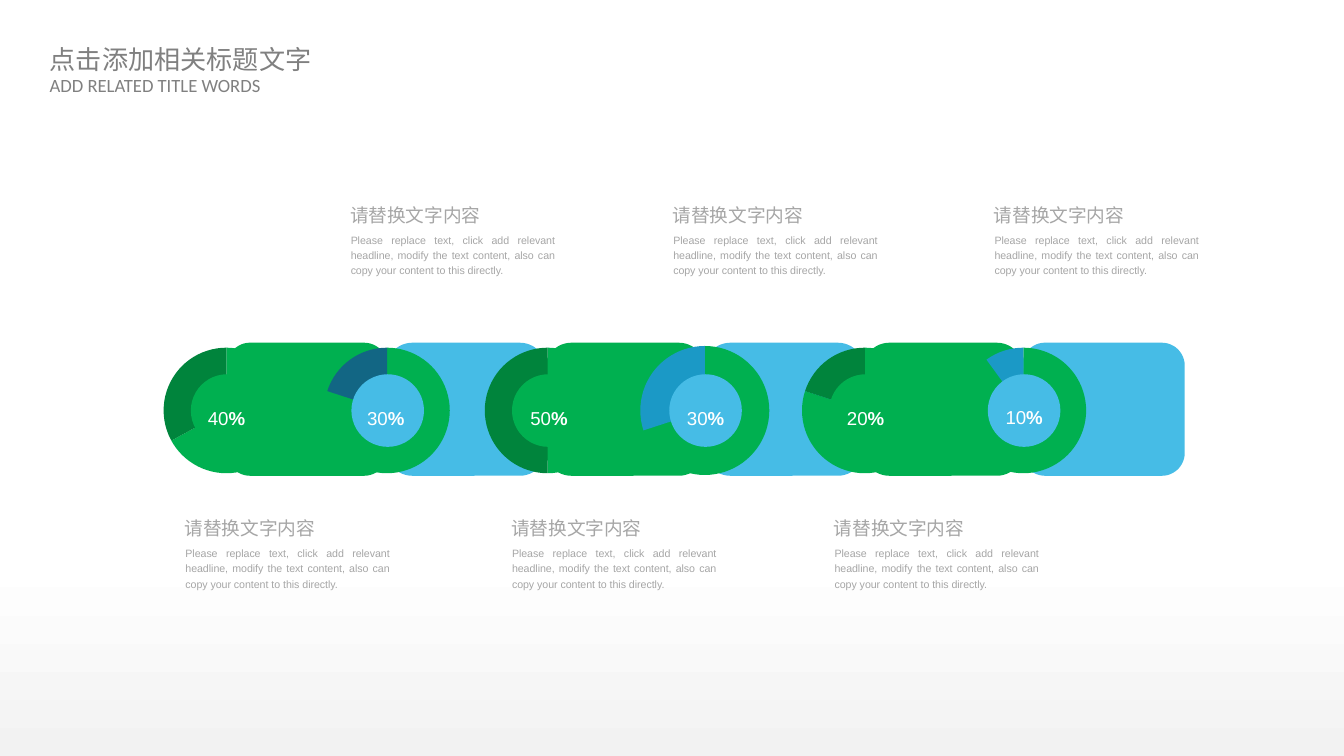
import pptx
import pptx.chart.data
import pptx.dml.color
import pptx.enum.chart
import pptx.enum.shapes
import pptx.enum.text
import pptx.oxml
import pptx.oxml.ns
import pptx.util

RGBColor = pptx.dml.color.RGBColor
SHAPE = pptx.enum.shapes.MSO_SHAPE
ALIGN = pptx.enum.text.PP_ALIGN
ANCHOR = pptx.enum.text.MSO_ANCHOR
qn = pptx.oxml.ns.qn

BLACK = RGBColor(0x00, 0x00, 0x00)
WHITE = RGBColor(0xFF, 0xFF, 0xFF)
MIST = RGBColor(0xF2, 0xF2, 0xF2)
GREEN = RGBColor(0x00, 0xB0, 0x50)
DARK_GREEN = RGBColor(0x00, 0x84, 0x3C)
SKY = RGBColor(0x46, 0xBC, 0xE6)
BLUE = RGBColor(0x1B, 0x99, 0xC6)
NAVY = RGBColor(0x12, 0x66, 0x84)
TITLE_GRAY = RGBColor(0x80, 0x80, 0x80)
TEXT_GRAY = RGBColor(0xA6, 0xA6, 0xA6)

CJK = "Noto Sans CJK SC"
COLUMNS = 100
ROWS = COLUMNS * 9 / 16
HEADING = "请替换文字内容"
BODY = ("Please replace text, click add relevant headline, modify the text "
        "content, also can copy your content to this directly.")


class Deck:
    font = "Arial"

    def __init__(self, prs):
        self.s = prs.slides.add_slide(prs.slide_layouts[6])
        self.cell = prs.slide_width / COLUMNS

    def box(self, *lengths):
        return [pptx.util.Emu(round(n * self.cell)) for n in lengths]

    def shape(self, kind, left, top, width, height, color=None):
        sp = self.s.shapes.add_shape(kind, *self.box(left, top, width, height))
        sp.shadow.inherit = False
        sp.line.fill.background()
        if color is not None:
            sp.fill.solid()
            sp.fill.fore_color.rgb = color
        return sp

    def backdrop(self):
        sp = self.shape(SHAPE.RECTANGLE, 0, 0, COLUMNS, ROWS)
        sp.fill.gradient()
        sp.fill.gradient_angle = 90
        for stop, color, position in zip(sp.fill.gradient_stops, (MIST, WHITE), (0, 0.26)):
            stop.color.rgb = color
            stop.position = position

    def block(self, left, top, width, height, radius, color):
        sp = self.shape(SHAPE.ROUNDED_RECTANGLE, left, top, width, height, color)
        sp.adjustments[0] = radius / height

    def text(self, left, top, width, height, runs, size, color, font=None,
             inset=(0, 0), align=ALIGN.LEFT, spacing=None, anchor=ANCHOR.TOP, wrap=True):
        tf = self.s.shapes.add_textbox(*self.box(left, top, width, height)).text_frame
        tf.word_wrap = wrap
        tf.auto_size = pptx.enum.text.MSO_AUTO_SIZE.SHAPE_TO_FIT_TEXT
        tf.vertical_anchor = anchor
        tf.margin_left, tf.margin_top = self.box(*inset)
        tf.margin_right, tf.margin_bottom = tf.margin_left, tf.margin_top
        p = tf.paragraphs[0]
        p.alignment = align
        if spacing:
            p.line_spacing = spacing
        p.font.name = font or self.font
        p.font.size = pptx.util.Pt(size)
        p.font.color.rgb = color
        ea = pptx.oxml.parse_xml(f'<a:ea {pptx.oxml.ns.nsdecls("a")} typeface="{CJK}"/>')
        p._p.pPr.find(qn("a:defRPr")).append(ea)
        for words, bold in runs:
            r = p.add_run()
            r.text = words
            if bold:
                r.font.bold = True

    def pie(self, center, middle, size, share, color):
        data = pptx.chart.data.CategoryChartData()
        data.categories = ["1", "2"]
        data.add_series("Series 1", (100 - share, share))
        chart = self.s.shapes.add_chart(
            pptx.enum.chart.XL_CHART_TYPE.PIE,
            *self.box(center - size / 2, middle - size / 2, size, size), data).chart
        chart.has_title = False
        chart.has_legend = False
        chart.font.name = self.font
        chart.font.size = pptx.util.Pt(30)
        chart.font.color.rgb = BLACK
        plot = chart.plots[0]
        plot.vary_by_categories = False
        for i, fill in enumerate((GREEN, color)):
            fmt = plot.series[0].points[i].format
            fmt.fill.solid()
            fmt.fill.fore_color.rgb = fill
            fmt.line.fill.background()
        area = chart._chartSpace.find(".//" + qn("c:plotArea"))
        for old in area.findall(qn("c:layout")):
            area.remove(old)
        places = "".join(f'<c:{tag} val="{val}"/>' for tag, val in (
            ("layoutTarget", "inner"), ("xMode", "edge"), ("yMode", "edge"),
            ("x", 0.07), ("y", 0), ("w", 0.85), ("h", 1)))
        area.insert(0, pptx.oxml.parse_xml(
            f'<c:layout {pptx.oxml.ns.nsdecls("c")}>'
            f'<c:manualLayout>{places}</c:manualLayout></c:layout>'))

    def ring(self, center, size, share, color, hub):
        middle, disc = 30.55, 5.4
        self.pie(center, middle, size, share, color)
        self.shape(SHAPE.OVAL, center - disc / 2, middle - disc / 2, disc, disc, hub)

    def label(self, left, top, number):
        self.text(left, top, 4.4, 2.7, [(number, False), ("%", True)], 10, WHITE,
                  align=ALIGN.CENTER, spacing=1.6, anchor=ANCHOR.MIDDLE)

    def note(self, left, top):
        self.text(left, top, 15.2, 3.4, [(BODY, False)], 5.7, TEXT_GRAY,
                  align=ALIGN.JUSTIFY, spacing=1.2)
        self.text(left - 0.25, top - 2.25, 10.4, 2, [(HEADING, False)], 10, TEXT_GRAY,
                  inset=(0.2, 0.2))


def main():
    prs = pptx.Presentation()
    prs.slide_width = pptx.util.Inches(10)
    prs.slide_height = pptx.util.Emu(prs.slide_width * 9 // 16)
    deck = Deck(prs)
    deck.backdrop()
    deck.text(2.9, 2.8, 21.1, 3.1, [("点击添加相关标题文字", False)], 14, TITLE_GRAY,
              font=CJK, inset=(0.8, 0.4), wrap=False)
    deck.text(2.9, 5.1, 17.5, 2.4, [("ADD RELATED TITLE WORDS", False)], 10, TITLE_GRAY,
              font="Calibri", inset=(0.8, 0.4), wrap=False)

    hubs = (GREEN, SKY) * 3
    for i in reversed(range(6)):
        width = 12.1 if i == 5 else 11.9
        radius = 1.7 if i in (0, 5) else 1.95
        deck.block(16.9 + 11.83 * i, 25.5, width, 9.9, radius, hubs[i])

    rings = [
        (16.9, 11, 33, DARK_GREEN),
        (28.85, 11, 20, NAVY),
        (40.8, 11, 50, DARK_GREEN),
        (52.5, 11.3, 30, BLUE),
        (64.4, 11, 20, DARK_GREEN),
        (76.2, 11, 10, BLUE),
    ]
    for hub, ring in zip(hubs, rings):
        deck.ring(*ring, hub)

    labels = [(14.65, 29.25, "40"), (26.5, 29.25, "30"), (38.65, 29.25, "50"),
              (50.3, 29.25, "30"), (62.2, 29.25, "20"), (74, 29.2, "10")]
    for label in labels:
        deck.label(*label)

    for top, lefts in ((40.5, (13.8, 38.1, 62.1)), (17.2, (26.1, 50.1, 74))):
        for left in lefts:
            deck.note(left, top)
    prs.save("out.pptx")


if __name__ == "__main__":
    main()
